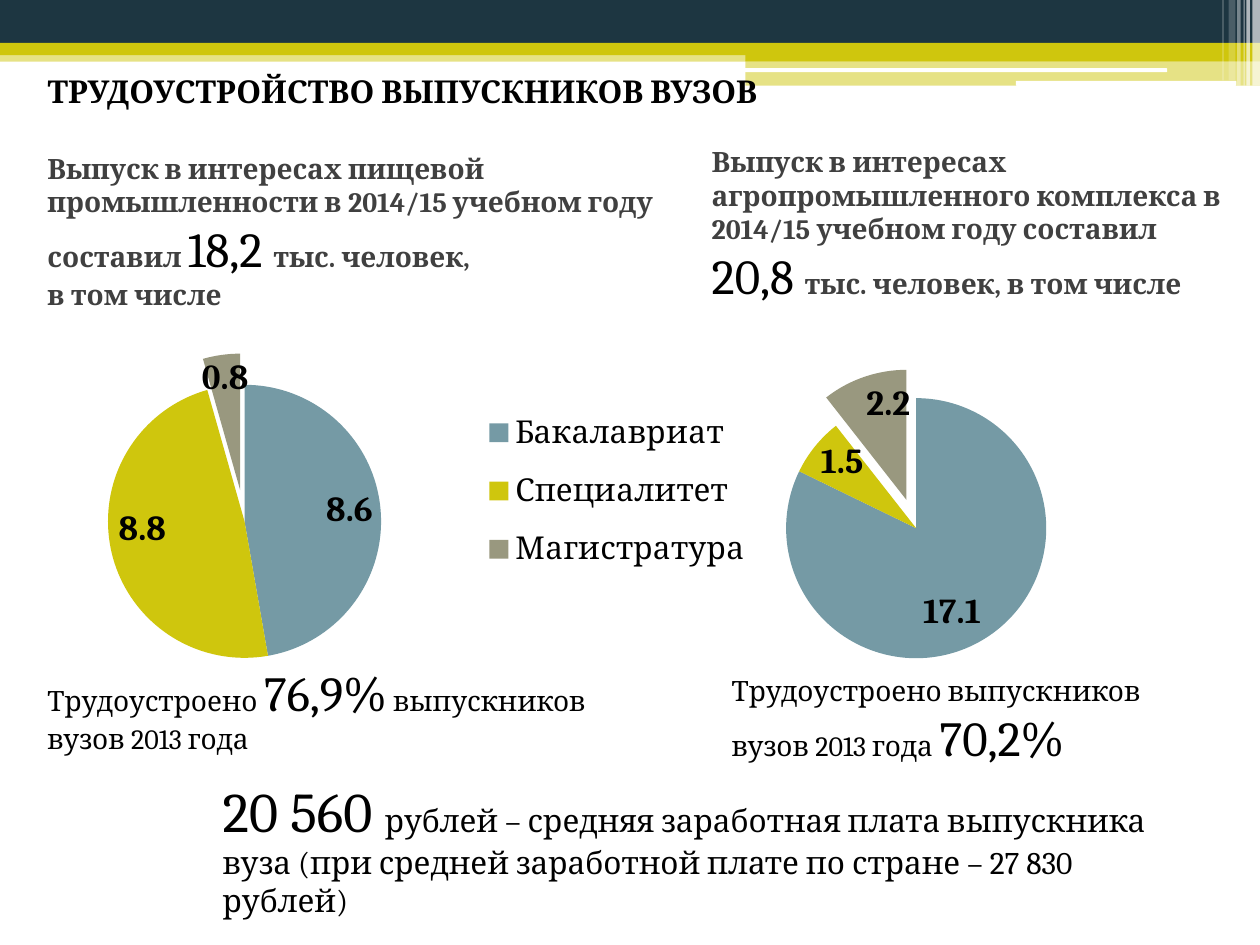
from dataclasses import dataclass
from typing import NamedTuple

import pptx
import pptx.chart.data
import pptx.dml.color
import pptx.enum.chart
import pptx.enum.shapes
import pptx.enum.text
import pptx.oxml
import pptx.oxml.ns
import pptx.util

Pt = pptx.util.Pt
RGB = pptx.dml.color.RGBColor.from_string
SHAPES = pptx.enum.shapes.MSO_SHAPE
NAMESPACE = pptx.oxml.ns.nsdecls("c")


@dataclass(frozen=True)
class Theme:
    font: str = "Cambria"
    navy: str = "1D3641"
    lime: str = "CFC60D"
    blue: str = "759AA5"
    olive: str = "99987F"
    white: str = "FFFFFF"
    black: str = "000000"
    grey: str = "404040"
    body: int = 16
    heading: int = 18
    label: int = 20
    figure: int = 28
    salary: int = 32


THEME = Theme()


class Area(NamedTuple):
    left: float
    top: float
    width: float
    height: float


class Bar(NamedTuple):
    area: Area
    color: str
    opacity: int = 100
    shape: int = SHAPES.RECTANGLE


class Words(NamedTuple):
    text: str
    size: int = THEME.body
    color: str = THEME.black
    bold: bool = False


class Note(NamedTuple):
    area: Area
    paragraphs: list[list[Words]]


class Pie(NamedTuple):
    area: Area
    categories: list[str]
    values: list[float]
    plot: Area  # fractions of the chart
    moved_label: int
    label_shift: tuple[float, float]
    legend: Area | None = None  # fractions of the chart


def lead(text: str) -> Words:
    return Words(text, color=THEME.grey, bold=True)


def figure(text: str) -> Words:
    return Words(text, THEME.figure)


def stripe(left: float, width: float, height: float, opacity: int) -> Bar:
    return Bar(Area(left, 0, width, height), THEME.white, opacity)


BARS = [
    Bar(Area(0, 28.8, 720, 6.5), THEME.lime, 50),
    Bar(Area(0, 0, 720, 24.5), THEME.navy),
    Bar(Area(0, 24.5, 720, 7), THEME.lime),
    Bar(Area(426, 28, 294, 7), THEME.lime),
    Bar(Area(426, 34.7, 294, 14.3), THEME.lime, 50),
    Bar(Area(425.5, 39, 241.5, 2.2), THEME.white, shape=SHAPES.ROUNDED_RECTANGLE),
    Bar(Area(580.5, 46.2, 126, 2.8), THEME.white, shape=SHAPES.ROUNDED_RECTANGLE),
    stripe(715.6, 4.4, 49, 65),
    stripe(712.2, 2, 49, 65),
    stripe(710.6, 0.7, 49, 60),
    stripe(707, 2, 49, 40),
    stripe(702, 4, 46, 20),
    stripe(698.5, 0.7, 46, 30),
]

PIES = [
    Pie(Area(48.2, 178.6, 393, 255), ["Бакалавриат", "Специалитет", "Магистратура"],
        [8.6, 8.8, 0.8], Area(0.034, 0.162, 0.398, 0.612), 2, (-0.03, -0.01),
        Area(0.57, 0.18, 0.41, 0.44)),
    Pie(Area(419.8, 181.4, 380, 255), ["1", "2", "3"],
        [17.1, 1.5, 2.2], Area(0.077, 0.181, 0.392, 0.583), 1, (0, -0.02)),
]

NOTES = [
    Note(Area(20, 82.8, 402.5, 101.5), [
        [lead("Выпуск в интересах пищевой промышленности в 2014/15 учебном году составил "),
         figure("18,2 "), lead("тыс. человек,")],
        [lead("в том числе")]]),
    Note(Area(20, 375, 332, 60.5), [
        [Words("Трудоустроено "), figure("76,9%"), Words(" выпускников вузов 2013 года")]]),
    Note(Area(120.2, 440, 566.6, 67.7), [
        [Words("20 560 ", THEME.salary),
         Words("рублей – средняя заработная плата выпускника вуза "
               "(при средней заработной плате по стране – 27 830 рублей)", THEME.heading)]]),
    Note(Area(399.6, 79.2, 306, 99.4), [
        [lead("Выпуск в интересах агропромышленного комплекса в 2014/15 учебном году составил "),
         figure("20,8 "), lead("тыс. человек, в том числе")]]),
    Note(Area(411, 381.6, 294.5, 60.5), [
        [Words("Трудоустроено выпускников вузов 2013 года "), figure("70,2%")]]),
]


def points(area: Area) -> list[int]:
    return [Pt(length) for length in area]


def style_font(font, size: int, color: str, bold: bool = False) -> None:
    font.name = THEME.font
    font.size = Pt(size)
    font.bold = bold
    font.color.rgb = RGB(color)


def add_bar(page, bar: Bar) -> None:
    shape = page.shapes.add_shape(bar.shape, *points(bar.area))
    shape.shadow.inherit = False
    shape.line.fill.background()
    shape.fill.solid()
    shape.fill.fore_color.rgb = RGB(bar.color)
    if bar.opacity < 100:
        color = shape.fill._xPr.find(".//" + pptx.oxml.ns.qn("a:srgbClr"))
        alpha = pptx.oxml.parse_xml(f'<a:alpha {pptx.oxml.ns.nsdecls("a")} val="{bar.opacity * 1000}"/>')
        color.append(alpha)


def add_note(page, note: Note) -> None:
    frame = page.shapes.add_textbox(*points(note.area)).text_frame
    frame.word_wrap = True
    frame.auto_size = pptx.enum.text.MSO_AUTO_SIZE.SHAPE_TO_FIT_TEXT
    for index, pieces in enumerate(note.paragraphs):
        para = frame.add_paragraph() if index else frame.paragraphs[0]
        para.font.name = THEME.font
        for piece in pieces:
            span = para.add_run()
            span.text = piece.text
            style_font(span.font, piece.size, piece.color, piece.bold)


def manual_layout(entries: dict[str, object]):
    """Build a c:layout element from the tags and values of its manual layout."""
    tags = "".join(f'<c:{tag} val="{value}"/>' for tag, value in entries.items())
    return pptx.oxml.parse_xml(
        f"<c:layout {NAMESPACE}><c:manualLayout>{tags}</c:manualLayout></c:layout>")


def frame_layout(area: Area, target: dict[str, str]):
    return manual_layout(target | {"xMode": "edge", "yMode": "edge"}
                         | dict(zip("xywh", area)))


def add_pie(page, pie: Pie) -> None:
    data = pptx.chart.data.CategoryChartData(number_format="#,##0.0")
    data.categories = pie.categories
    data.add_series("Series 1", pie.values)
    chart = page.shapes.add_chart(
        pptx.enum.chart.XL_CHART_TYPE.PIE, *points(pie.area), data).chart
    style_font(chart.font, THEME.heading, THEME.black)
    chart.has_title = False
    chart.has_legend = pie.legend is not None
    if pie.legend:
        chart.legend.position = pptx.enum.chart.XL_LEGEND_POSITION.RIGHT
        chart.legend.include_in_layout = False
        legend = chart.legend._element
        for old in legend.findall(pptx.oxml.ns.qn("c:layout")):
            legend.remove(old)
        legend.find(pptx.oxml.ns.qn("c:legendPos")).addnext(frame_layout(pie.legend, {}))

    plot_area = chart._chartSpace.chart.plotArea
    for old in plot_area.findall(pptx.oxml.ns.qn("c:layout")):
        plot_area.remove(old)
    plot_area.insert(0, frame_layout(pie.plot, {"layoutTarget": "inner"}))

    plot = chart.plots[0]
    plot.vary_by_categories = True
    series = plot.series[0]
    for index, color in enumerate((THEME.blue, THEME.lime, THEME.olive)):
        fill = series.points[index].format.fill
        fill.solid()
        fill.fore_color.rgb = RGB(color)
    last_slice = series._element.findall(pptx.oxml.ns.qn("c:dPt"))[-1]
    last_slice.find(pptx.oxml.ns.qn("c:spPr")).addprevious(
        pptx.oxml.parse_xml(f'<c:explosion {NAMESPACE} val="23"/>'))

    inside_end = pptx.enum.chart.XL_LABEL_POSITION.INSIDE_END
    labels = series.data_labels
    labels.show_value = True
    labels.number_format = "#,##0.0"
    labels.number_format_is_linked = False
    labels.position = inside_end
    style_font(labels.font, THEME.label, THEME.black, True)
    moved = series.points[pie.moved_label].data_label
    style_font(moved.font, THEME.label, THEME.black, True)
    moved.position = inside_end
    moved._dLbl.find(pptx.oxml.ns.qn("c:idx")).addnext(
        manual_layout(dict(zip("xy", pie.label_shift))))


def set_title(page, text: str, area: Area) -> None:
    title = page.shapes.title
    title.left, title.top, title.width, title.height = points(area)
    frame = title.text_frame
    frame.text = text
    frame.word_wrap = True
    frame.auto_size = pptx.enum.text.MSO_AUTO_SIZE.SHAPE_TO_FIT_TEXT
    frame.vertical_anchor = pptx.enum.text.MSO_ANCHOR.TOP
    para = frame.paragraphs[0]
    para.alignment = pptx.enum.text.PP_ALIGN.LEFT
    style_font(para.font, THEME.heading, THEME.black, True)
    page.shapes._spTree.append(title._element)  # bring in front of the bars


def main() -> None:
    deck = pptx.Presentation()
    deck.slide_width, deck.slide_height = Pt(720), Pt(540)
    page = deck.slides.add_slide(deck.slide_layouts.get_by_name("Title Only"))
    for bar in BARS:
        add_bar(page, bar)
    for pie in PIES:
        add_pie(page, pie)
    for note in NOTES:
        add_note(page, note)
    set_title(page, "ТРУДОУСТРОЙСТВО ВЫПУСКНИКОВ ВУЗОВ", Area(20, 37.5, 663, 29))
    deck.save("out.pptx")


if __name__ == "__main__":
    main()
